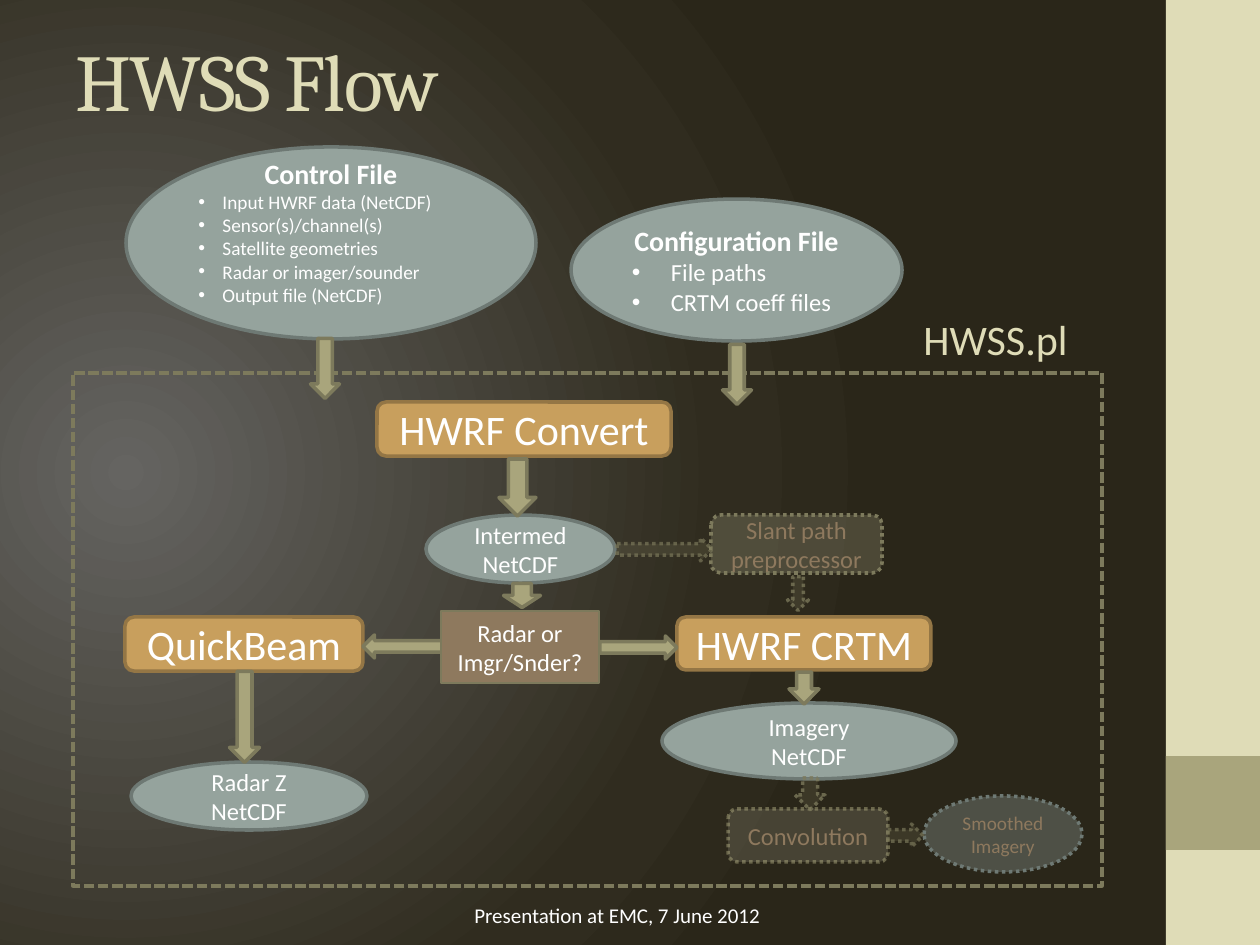
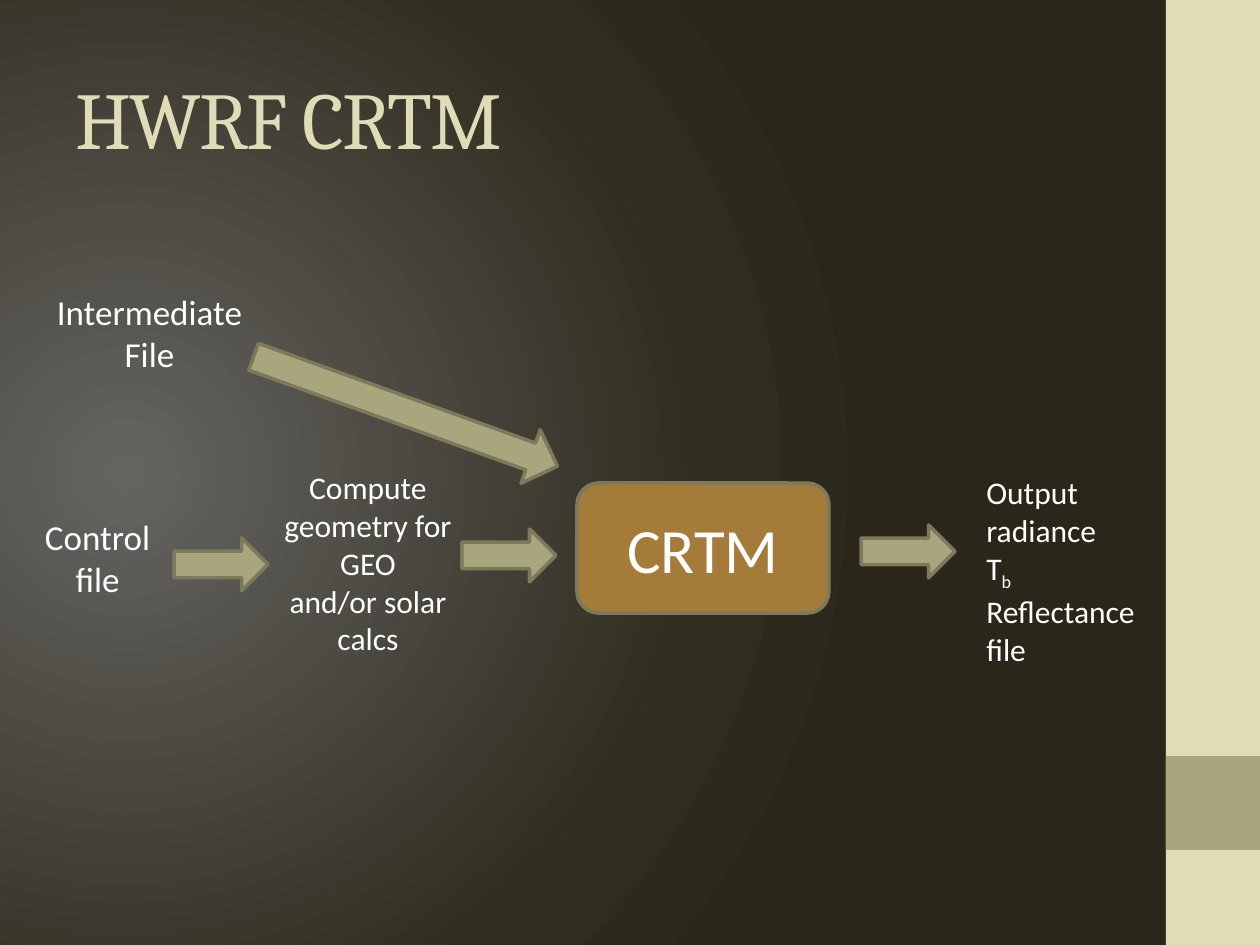
"""Build two slides on the HWSS flow and the HWRF CRTM step."""
from pptx import Presentation, util as u
from pptx.dml.color import RGBColor
from pptx.enum import dml, shapes, text
from pptx.oxml import parse_xml
from pptx.oxml.ns import nsdecls, qn
from lxml import etree

SCALE = 914400 / 126
HUE = {
    "cream": "DFDCB7", "olive": "A9A57C", "moss": "7D7A5C", "white": "FFFFFF",
    "gold": "C89F5D", "bronze": "947645", "amber": "A47B38", "sage": "95A39D",
    "slate": "6E7974", "brown": "8E795E", "sand": "CBC9B0",
}
STOPS = ((0, "656461"), (75, "302C1F"), (100, "2A2619"))
KIND = shapes.MSO_SHAPE
DOT = dml.MSO_LINE.ROUND_DOT
DASH = dml.MSO_LINE.SQUARE_DOT
LEFT, MID = text.PP_ALIGN.LEFT, text.PP_ALIGN.CENTER


def draw(slide, kind, spot, fill=None, line=None, wide=2, dash=None,
         fade=None, dim=None, turn=0):
    """Add a shape, or a text box if kind is None, at a spot in px."""
    spot = [u.Emu(round(n * SCALE)) for n in spot]
    if kind is None:
        item = slide.shapes.add_textbox(*spot)
        item.text_frame.word_wrap = True
        return item
    item = slide.shapes.add_shape(kind, *spot)
    item.shadow.inherit = False
    item.rotation = turn
    if line:
        item.line.width = u.Pt(wide)
        item.line.dash_style = dash
    for part, hue, alpha in ((item.fill, fill, fade), (item.line.fill, line, dim)):
        if not hue:
            part.background()
            continue
        part.solid()
        part.fore_color.rgb = RGBColor.from_string(HUE[hue])
        if alpha:
            root = item.line._ln if part is item.line.fill else item.element.spPr
            tint = root.find(qn("a:solidFill"))[0]
            etree.SubElement(tint, qn("a:alpha")).set("val", str(alpha * 1000))
    return item


def write(item, words, size=14, hue="white", font="Calibri", bold=False,
          align=MID, dent=0, track=0, base=0, join=False):
    """Append one paragraph per line, or join a run to the last one."""
    frame = item.text_frame
    for row in words.split("\n"):
        para = frame.paragraphs[-1]
        if para.runs and not join:
            para = frame.add_paragraph()
        para.alignment = align
        run = para.add_run()
        run.text = row
        run.font.size = u.Pt(size)
        run.font.name = font
        run.font.bold = bold
        run.font.color.rgb = RGBColor.from_string(HUE[hue])
        if track:
            run.font._element.set("spc", str(track))
        if base:
            run.font._element.set("baseline", str(base))
        if dent:
            prop = para._p.get_or_add_pPr()
            prop.set("marL", str(round(dent * SCALE)))
            prop.set("indent", str(-round(dent * SCALE)))
            etree.SubElement(prop, qn("a:buFont")).set("typeface", "Arial")
            etree.SubElement(prop, qn("a:buChar")).set("char", "•")


deck = Presentation()
deck.slide_width, deck.slide_height = u.Inches(10), u.Inches(7.5)
stops = "".join(
    f'<a:gs pos="{pos * 1000}"><a:srgbClr val="{hue}"/></a:gs>' for pos, hue in STOPS)
pages = []
for name, top in (("HWSS Flow", 0), ("HWRF CRTM", 38)):
    page = deck.slides.add_slide(deck.slide_layouts[6])
    page.element.cSld.insert(0, parse_xml(
        f'<p:bg {nsdecls("p", "a")}><p:bgPr><a:gradFill rotWithShape="1">'
        f'<a:gsLst>{stops}</a:gsLst><a:path path="circle">'
        '<a:fillToRect l="20000" t="50000" r="100000" b="50000"/></a:path>'
        '</a:gradFill><a:effectLst/></p:bgPr></p:bg>'))
    draw(page, KIND.RECTANGLE, (1166, 0, 94, 945), "cream")
    draw(page, KIND.RECTANGLE, (1166, 756, 94, 94), "olive")
    title = draw(page, None, (63, top, 1050, 158))
    title.text_frame.vertical_anchor = text.MSO_ANCHOR.MIDDLE
    write(title, name, size=46, hue="cream", font="Cambria", align=LEFT, track=-100)
    pages.append(page)
flow, crtm = pages

draw(flow, KIND.RECTANGLE, (73, 373, 1029, 513), line="moss", dash=DASH)

for words, spot in (
    ("HWRF Convert", (377, 402, 294, 54)),
    ("QuickBeam", (125, 617, 238, 54)),
    ("HWRF CRTM", (677, 617, 254, 53)),
):
    step = draw(flow, KIND.ROUNDED_RECTANGLE, spot, "gold", "bronze")
    write(step, words, size=24)

for words, spot in (
    ("Intermed\nNetCDF", (426, 515, 189, 68)),
    ("Imagery\nNetCDF", (662, 703, 294, 76)),
    ("Radar Z\nNetCDF", (131, 762, 236, 68)),
):
    write(draw(flow, KIND.OVAL, spot, "sage", "slate"), words)

for head, rows, size, dent, spot in (
    ("Control File", "Input HWRF data (NetCDF)\nSensor(s)/channel(s)\n"
     "Satellite geometries\nRadar or imager/sounder\nOutput file (NetCDF)",
     11, 24, (126, 147, 410, 192)),
    ("Configuration File", "File paths\nCRTM coeff files",
     14, 39, (571, 199, 331, 142)),
):
    file = draw(flow, KIND.OVAL, spot, "sage", "slate")
    write(file, head, size=16, bold=True)
    write(file, rows, size=size, align=LEFT, dent=dent)
    if head == "Control File":
        file.text_frame.margin_bottom = u.Emu(round(29 * SCALE))

for words, kind, spot, fill, line, fade, dim, size in (
    ("Slant path preprocessor", KIND.ROUNDED_RECTANGLE, (711, 515, 171, 58),
     "cream", "moss", 19, None, 14),
    ("Convolution", KIND.ROUNDED_RECTANGLE, (728, 809, 160, 53),
     "sand", "olive", 18, 51, 14),
    ("Smoothed Imagery", KIND.OVAL, (924, 796, 158, 76),
     "sage", "slate", 34, None, 11),
):
    plan = draw(flow, kind, spot, fill, line, dash=DOT, fade=fade, dim=dim)
    write(plan, words, size=size, hue="brown")

for spot, turn in (
    ((295, 354, 60, 29), 90),
    ((707, 360, 60, 29), 90),
    ((489, 469, 57, 37), 90),
    ((510, 577, 24, 37), 90),
    ((788, 673, 32, 30), 90),
    ((199, 702, 91, 30), 90),
    ((600, 636, 77, 23), 0),
    ((363, 635, 81, 23), 180),
):
    draw(flow, KIND.RIGHT_ARROW, spot, "olive", "moss", turn=turn)

for spot, turn, dim in (
    ((781, 583, 34, 21), 90, 74),
    ((794, 779, 32, 30), 90, 76),
    ((617, 538, 95, 23), 0, 66),
    ((888, 824, 35, 23), 0, 66),
):
    draw(flow, KIND.RIGHT_ARROW, spot, "olive", "moss", dash=DOT,
         fade=15, dim=dim, turn=turn)

test = draw(flow, KIND.RECTANGLE, (441, 611, 158, 72), "brown", "moss", wide=0.75)
write(test, "Radar or Imgr/Snder?")
write(draw(flow, None, (911, 307, 212, 63)), "HWSS.pl", size=24, hue="cream", align=LEFT)
write(draw(flow, None, (462, 896, 336, 38)), "Presentation at EMC, 7 June 2012",
      size=12, align=LEFT)

core = draw(crtm, KIND.ROUNDED_RECTANGLE, (577, 483, 252, 130), "amber", "moss")
write(core, "CRTM", size=36)

for words, spot, size, wrap in (
    ("Intermediate\nFile", (43, 284, 213, 97), 20, False),
    ("Control\nfile", (32, 509, 131, 97), 20, False),
    ("Compute\ngeometry for GEO\nand/or solar calcs", (256, 462, 224, 204), 18, True),
):
    note = draw(crtm, None, spot)
    note.text_frame.word_wrap = wrap
    write(note, words, size=size)

for spot, turn in (
    ((861, 525, 94, 53), 0),
    ((462, 529, 94, 53), 0),
    ((174, 538, 94, 53), 0),
    ((244, 383, 323, 57), 19.8),
):
    draw(crtm, KIND.RIGHT_ARROW, spot, "olive", "moss", turn=turn)

out = draw(crtm, None, (974, 467, 203, 204))
write(out, "Output radiance\nT", size=18, align=LEFT)
write(out, "b", size=18, align=LEFT, base=-25000, join=True)
write(out, "Reflectance file", size=18, align=LEFT)

deck.save("out.pptx")
